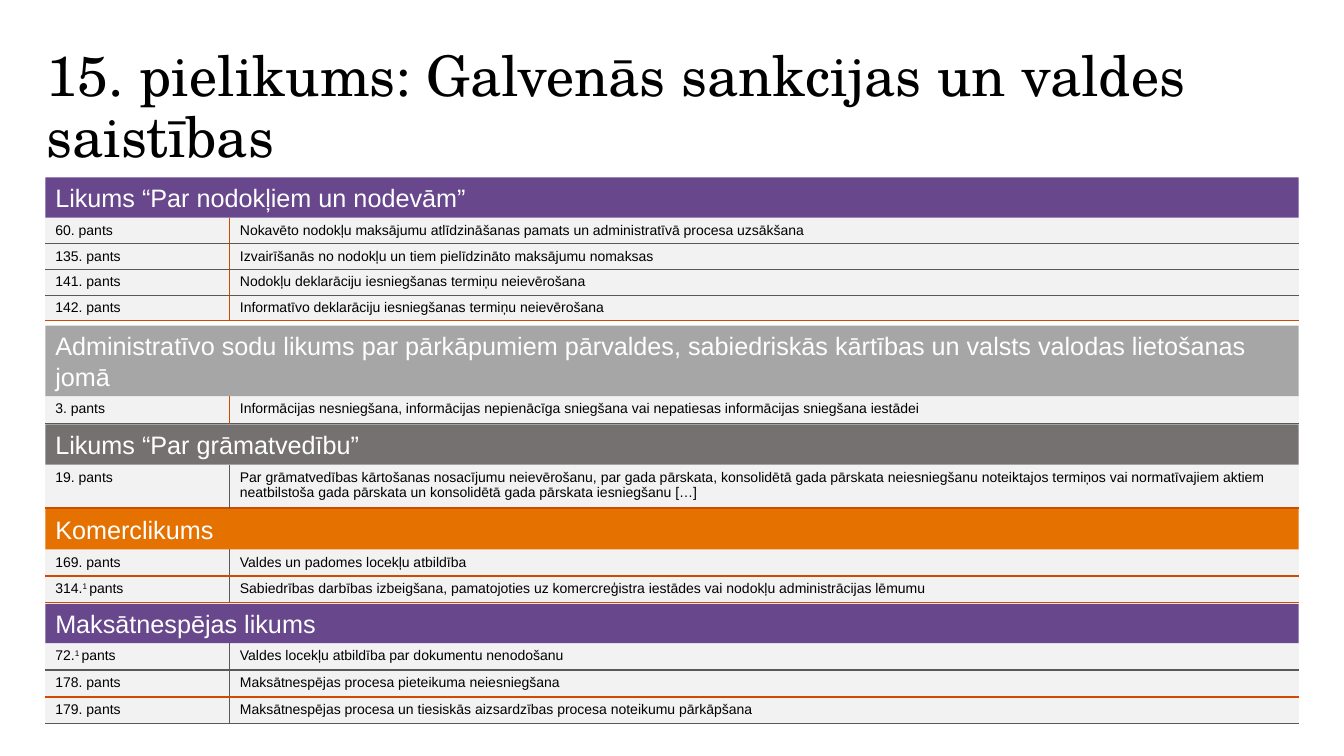
from lxml.etree import SubElement
from pptx import Presentation
from pptx.dml.color import RGBColor
from pptx.enum.shapes import MSO_SHAPE
from pptx.enum.text import MSO_ANCHOR, PP_ALIGN
from pptx.oxml.ns import qn
from pptx.util import Inches, Pt

COLORS = {
    "purple": "68478C", "silver": "A6A6A6", "taupe": "767171", "orange": "E57100",
    "rust": "D04A02", "rule": "595959", "cell": "F2F2F2", "white": "FFFFFF", "black": "000000",
}
LEFT, WIDTH, ARTICLE_WIDTH = 0.45, 12.43, 1.83

# heading, colour, top, heading height, row height, column rule, row rules, rows
SECTIONS = [
    ("Likums “Par nodokļiem un nodevām”", "purple", 1.76, 0.4, 0.256,
     "rust", ["rule", "rule", "rule", "rust"],
     [("60. pants", "Nokavēto nodokļu maksājumu atlīdzināšanas pamats un administratīvā procesa uzsākšana"),
      ("135. pants", "Izvairīšanās no nodokļu un tiem pielīdzināto maksājumu nomaksas"),
      ("141. pants", "Nodokļu deklarāciju iesniegšanas termiņu neievērošana"),
      ("142. pants", "Informatīvo deklarāciju iesniegšanas termiņu neievērošana")]),
    ("Administratīvo sodu likums par pārkāpumiem pārvaldes, sabiedriskās kārtības un valsts "
     "valodas lietošanas jomā", "silver", 3.23, 0.7, 0.27, "rust", ["rule"],
     [("3. pants", "Informācijas nesniegšana, informācijas nepienācīga sniegšana vai nepatiesas "
                   "informācijas sniegšana iestādei")]),
    ("Likums “Par grāmatvedību”", "taupe", 4.21, 0.4, 0.43, "rule", ["rust"],
     [("19. pants", "Par grāmatvedības kārtošanas nosacījumu neievērošanu, par gada pārskata, "
                    "konsolidētā gada pārskata neiesniegšanu noteiktajos termiņos vai normatīvajiem "
                    "aktiem neatbilstoša gada pārskata un konsolidētā gada pārskata iesniegšanu […]")]),
    ("Komerclikums", "orange", 5.05, 0.4, 0.265, "rule", ["rust", "rust"],
     [("169. pants", "Valdes un padomes locekļu atbildība"),
      ("314.|1 |pants", "Sabiedrības darbības izbeigšana, pamatojoties uz komercreģistra iestādes "
                        "vai nodokļu administrācijas lēmumu")]),
    ("Maksātnespējas likums", "purple", 5.99, 0.39, 0.267, "rule", ["rule", "rust", "rule"],
     [("72.|1 |pants", "Valdes locekļu atbildība par dokumentu nenodošanu"),
      ("178. pants", "Maksātnespējas procesa pieteikuma neiesniegšana"),
      ("179. pants", "Maksātnespējas procesa un tiesiskās aizsardzības procesa noteikumu pārkāpšana")]),
]


def rgb(name):
    return RGBColor.from_string(COLORS[name])


class SlideBuilder:
    def __init__(self, slide):
        self.slide = slide
        self.body_font = "Arial"
        self.title_font = "TeX Gyre Schola"

    def style(self, run, font, size, color):
        run.font.name = font
        run.font.size = Pt(size)
        run.font.color.rgb = rgb(color)

    def title(self, text):
        sp = self.slide.shapes.title
        sp.left, sp.top = Inches(LEFT + 0.01), Inches(0.36)
        sp.width, sp.height = Inches(WIDTH), Inches(1.44)
        tf = sp.text_frame
        tf.text = text
        tf.word_wrap = True
        tf.vertical_anchor = MSO_ANCHOR.MIDDLE
        tf.margin_left = tf.margin_right = tf.margin_top = tf.margin_bottom = 0
        p = tf.paragraphs[0]
        p.alignment = PP_ALIGN.LEFT
        p.line_spacing = 0.9
        self.style(p.runs[0], self.title_font, 40, "black")

    def heading(self, text, color, top, height):
        sp = self.slide.shapes.add_shape(
            MSO_SHAPE.RECTANGLE, Inches(LEFT), Inches(top), Inches(WIDTH), Inches(height))
        sp.shadow.inherit = False
        sp.fill.solid()
        sp.fill.fore_color.rgb = rgb(color)
        sp.line.fill.background()
        tf = sp.text_frame
        tf.text = text
        tf.word_wrap = True
        tf.vertical_anchor = MSO_ANCHOR.MIDDLE
        p = tf.paragraphs[0]
        p.alignment = PP_ALIGN.LEFT
        self.style(p.runs[0], self.body_font, 18, "white")

    def borders(self, cell, colors):
        """Draw the sides named in colors (L, R, T, B) and hide the others."""
        tc_pr = cell._tc.get_or_add_tcPr()
        for i, side in enumerate("LRTB"):
            ln = tc_pr.makeelement(qn(f"a:ln{side}"), {"w": str(Pt(1))})
            tc_pr.insert(i, ln)
            if side in colors:
                fill = SubElement(ln, qn("a:solidFill"))
                SubElement(fill, qn("a:srgbClr"), val=COLORS[colors[side]])
            else:
                SubElement(ln, qn("a:noFill"))

    def cell(self, cell, text, colors):
        """Fill a cell; the second part of a text split by | is raised."""
        cell.fill.solid()
        cell.fill.fore_color.rgb = rgb("cell")
        p = cell.text_frame.paragraphs[0]
        for i, part in enumerate(text.split("|")):
            r = p.add_run()
            r.text = part
            self.style(r, self.body_font, 10, "black")
            if i == 1:
                r.font._element.set("baseline", "30000")
        self.borders(cell, colors)

    def table(self, rows, top, row_height, column_rule, row_rules):
        frame = self.slide.shapes.add_table(
            len(rows), 2, Inches(LEFT), Inches(top), Inches(WIDTH), Inches(row_height * len(rows)))
        table = frame.table
        table.first_row = table.horz_banding = False
        table.columns[0].width = Inches(ARTICLE_WIDTH)
        table.columns[1].width = Inches(WIDTH - ARTICLE_WIDTH)
        for i, (row, rule) in enumerate(zip(rows, row_rules)):
            table.rows[i].height = Inches(row_height)
            for j, (text, side) in enumerate(zip(row, "RL")):
                colors = {side: column_rule, "B": rule}
                if i:
                    colors["T"] = row_rules[i - 1]
                self.cell(table.cell(i, j), text, colors)


def main():
    prs = Presentation()
    prs.slide_width, prs.slide_height = Inches(13.33), Inches(7.5)
    builder = SlideBuilder(prs.slides.add_slide(prs.slide_layouts[5]))
    builder.title("15. pielikums: Galvenās sankcijas un valdes saistības")
    for heading, color, top, height, row_height, column_rule, row_rules, rows in SECTIONS:
        builder.table(rows, top + height, row_height, column_rule, row_rules)
        builder.heading(heading, color, top, height)
    prs.save("out.pptx")


if __name__ == "__main__":
    main()
